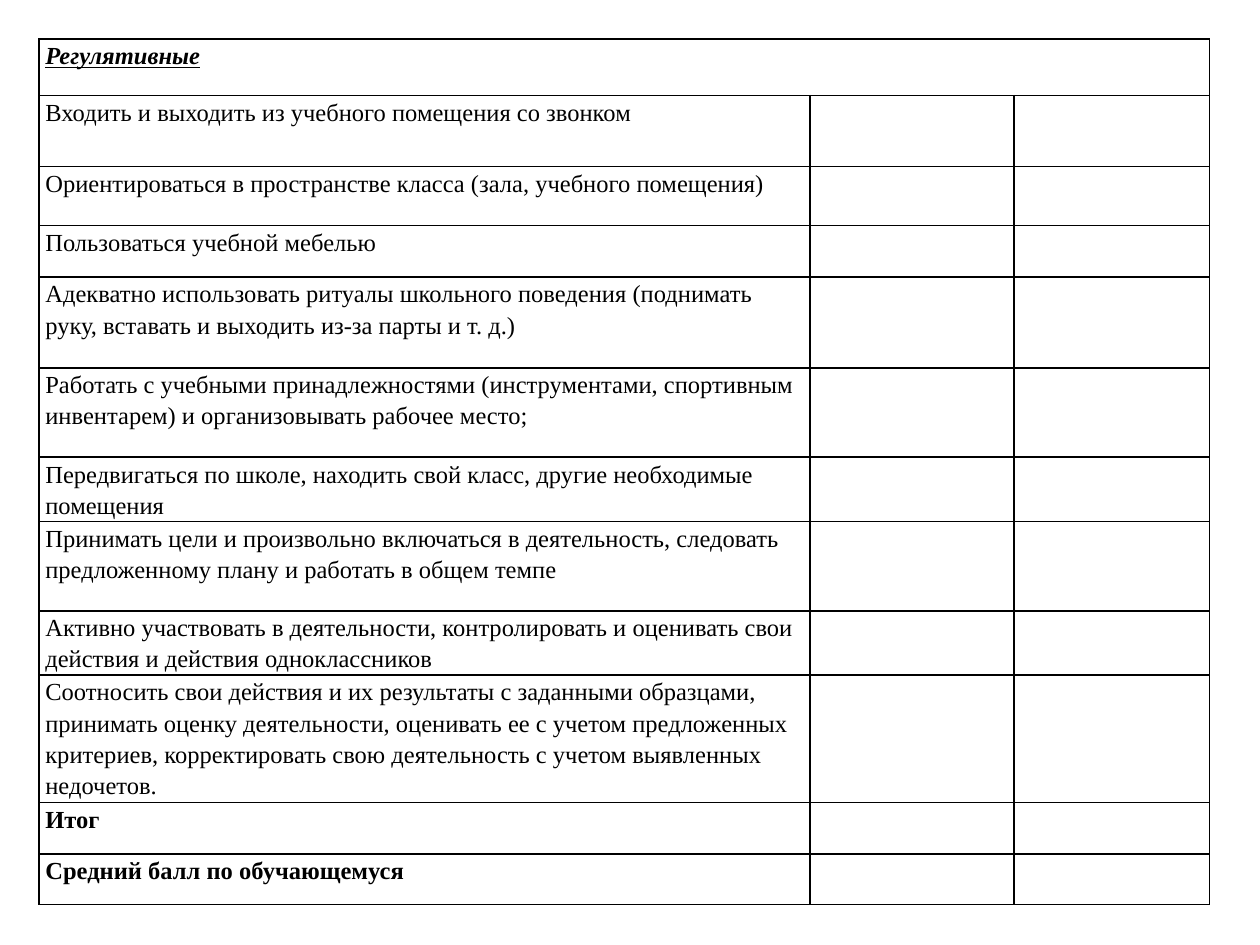
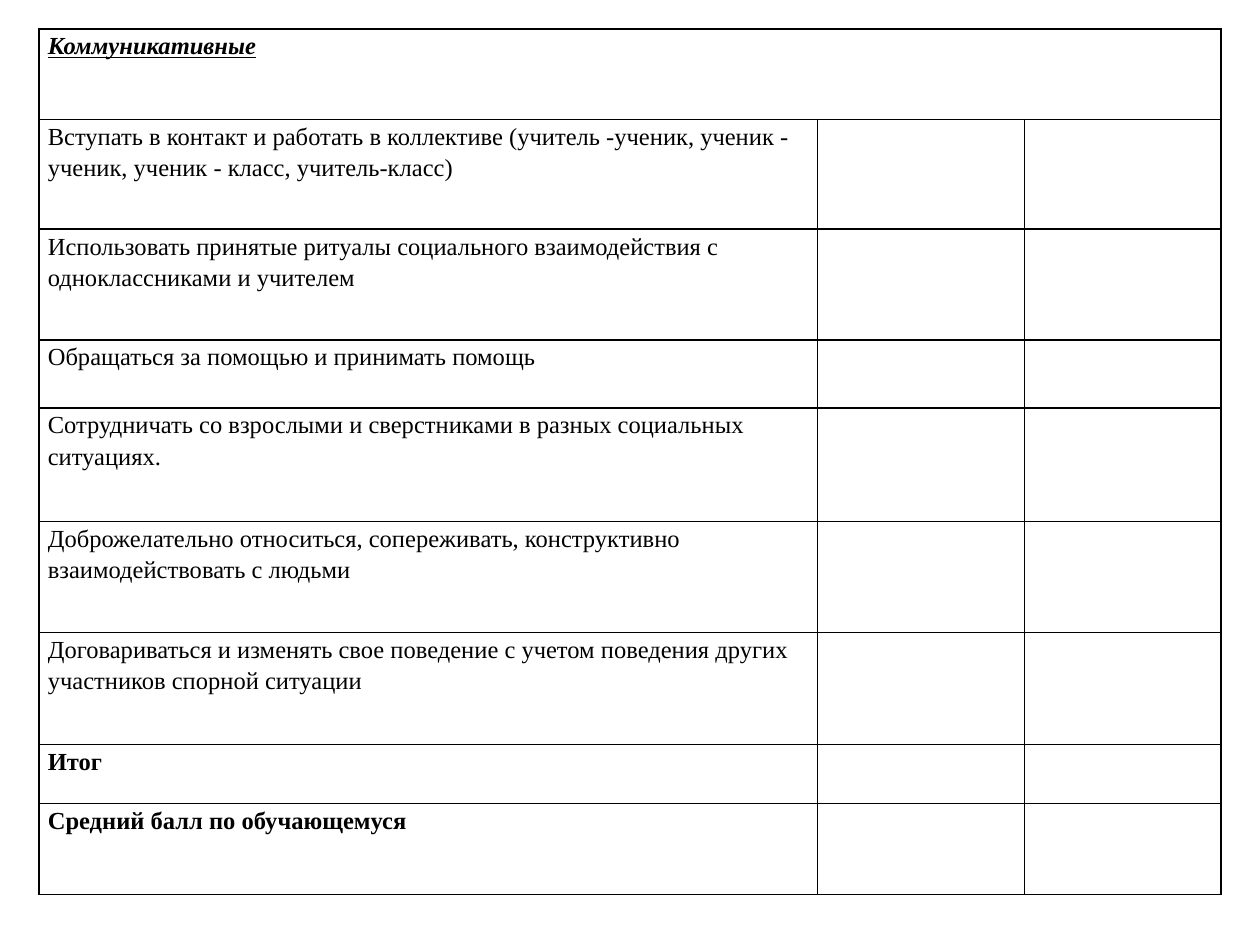
"""Build two assessment tables of learning skills."""
from lxml import etree
from pptx import Presentation
from pptx.dml.color import RGBColor
from pptx.oxml.ns import qn
from pptx.util import Inches, Pt

COLORS = {"ink": "000000"}
FONT = {"name": "Times New Roman", "size": Pt(14)}
PLAIN = {"bold": False, "italic": False, "underline": False}
HEADING = {"bold": True, "italic": True, "underline": True}
TOTAL = {"bold": True, "italic": False, "underline": False}
LINE_SPACING = 1.15
BORDER_WIDTH = Pt(1)
BORDER_SIDES = ("a:lnL", "a:lnR", "a:lnT", "a:lnB")
BLANK_LAYOUT = 6

TOTAL_LABELS = ["Итог", "Средний балл по обучающемуся"]

REGULATORY = {
    "heading": "Регулятивные",
    "skills": [
        "Входить и выходить из учебного помещения со звонком",
        "Ориентироваться в пространстве класса (зала, учебного помещения)",
        "Пользоваться учебной мебелью",
        "Адекватно использовать ритуалы школьного поведения (поднимать руку, "
        "вставать и выходить из-за парты и т. д.)",
        "Работать с учебными принадлежностями (инструментами, спортивным "
        "инвентарем) и организовывать рабочее место;",
        "Передвигаться по школе, находить свой класс, другие необходимые помещения",
        "Принимать цели и произвольно включаться в деятельность, следовать "
        "предложенному плану и работать в общем темпе",
        "Активно участвовать в деятельности, контролировать и оценивать свои "
        "действия и действия одноклассников",
        "Соотносить свои действия и их результаты с заданными образцами, "
        "принимать оценку деятельности, оценивать ее с учетом предложенных "
        "критериев, корректировать свою деятельность с учетом выявленных недочетов.",
    ],
    "position": (0.31, 0.31),
    "columns": [6.12, 1.62, 1.55],
    "rows": [0.45, 0.56, 0.47, 0.41, 0.72, 0.71, 0.51, 0.71, 0.51, 1.01, 0.41, 0.4],
    "margin": 0.05,
}

COMMUNICATIVE = {
    "heading": "Коммуникативные",
    "skills": [
        "Вступать в контакт и работать в коллективе (учитель -ученик, "
        "ученик - ученик, ученик - класс, учитель-класс)",
        "Использовать принятые ритуалы социального взаимодействия с "
        "одноклассниками и учителем",
        "Обращаться за помощью и принимать помощь",
        "Сотрудничать со взрослыми и сверстниками в разных социальных ситуациях.",
        "Доброжелательно относиться, сопереживать, конструктивно "
        "взаимодействовать с людьми",
        "Договариваться и изменять свое поведение с учетом поведения других "
        "участников спорной ситуации",
    ],
    "position": (0.31, 0.23),
    "columns": [6.18, 1.64, 1.56],
    "rows": [0.72, 0.87, 0.88, 0.54, 0.9, 0.88, 0.89, 0.47, 0.72],
    "margin": 0.07,
}


def set_attributes(target, values):
    """Set each named attribute of the target."""
    for name, value in values.items():
        setattr(target, name, value)


def format_cell(cell, margin):
    """Give a cell its margins, thin borders and no fill."""
    set_attributes(cell, {
        "margin_left": Inches(margin), "margin_right": Inches(margin),
        "margin_top": 0, "margin_bottom": 0,
    })
    properties = cell._tc.get_or_add_tcPr()
    for side in BORDER_SIDES:
        line = etree.SubElement(properties, qn(side), w=str(BORDER_WIDTH))
        fill = etree.SubElement(line, qn("a:solidFill"))
        etree.SubElement(fill, qn("a:srgbClr"), val=COLORS["ink"])
    cell.fill.background()


def write_label(cell, text, style):
    """Write a styled label into a cell."""
    paragraph = cell.text_frame.paragraphs[0]
    paragraph.line_spacing = LINE_SPACING
    run = paragraph.add_run()
    run.text = text
    set_attributes(run.font, {**FONT, **style})
    run.font.color.rgb = RGBColor.from_string(COLORS["ink"])


def add_skill_table(slide, section):
    """Add a heading row, skill rows and total rows with two score columns."""
    columns, rows = section["columns"], section["rows"]
    left, top = section["position"]
    table = slide.shapes.add_table(
        len(rows), len(columns), Inches(left), Inches(top),
        Inches(sum(columns)), Inches(sum(rows))).table
    set_attributes(table, {"first_row": False, "horz_banding": False})
    for column, width in zip(table.columns, columns):
        column.width = Inches(width)
    for row, height in zip(table.rows, rows):
        row.height = Inches(height)
    for cell in table.iter_cells():
        format_cell(cell, section["margin"])
    table.cell(0, 0).merge(table.cell(0, len(columns) - 1))
    labels = [(section["heading"], HEADING)]
    labels += [(skill, PLAIN) for skill in section["skills"]]
    labels += [(label, TOTAL) for label in TOTAL_LABELS]
    for index, (text, style) in enumerate(labels):
        write_label(table.cell(index, 0), text, style)


def main():
    """Build and save the presentation."""
    presentation = Presentation()
    presentation.slide_width = Inches(10)
    presentation.slide_height = Inches(7.5)
    for section in (REGULATORY, COMMUNICATIVE):
        slide = presentation.slides.add_slide(presentation.slide_layouts[BLANK_LAYOUT])
        add_skill_table(slide, section)
    presentation.save("out.pptx")


if __name__ == "__main__":
    main()
